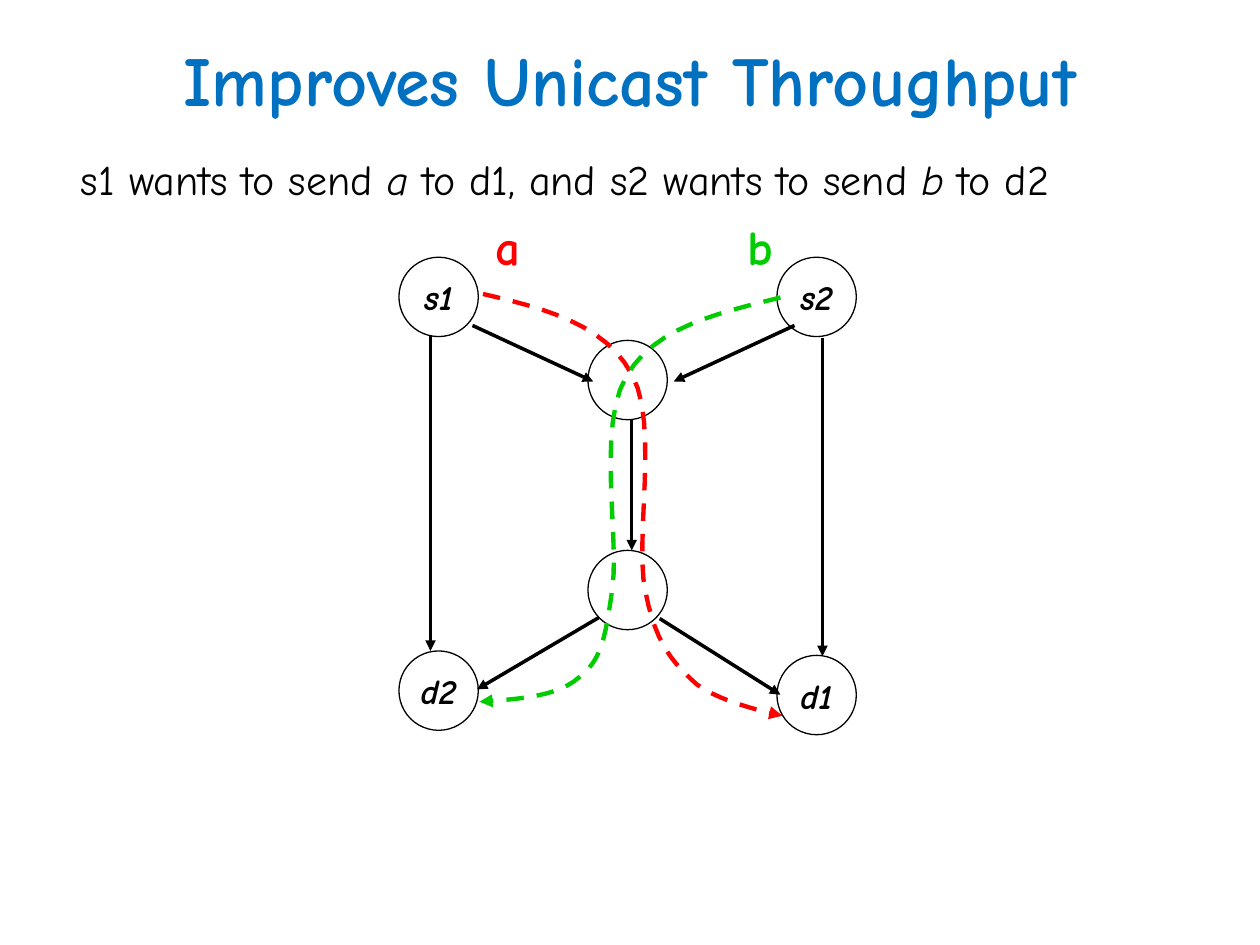
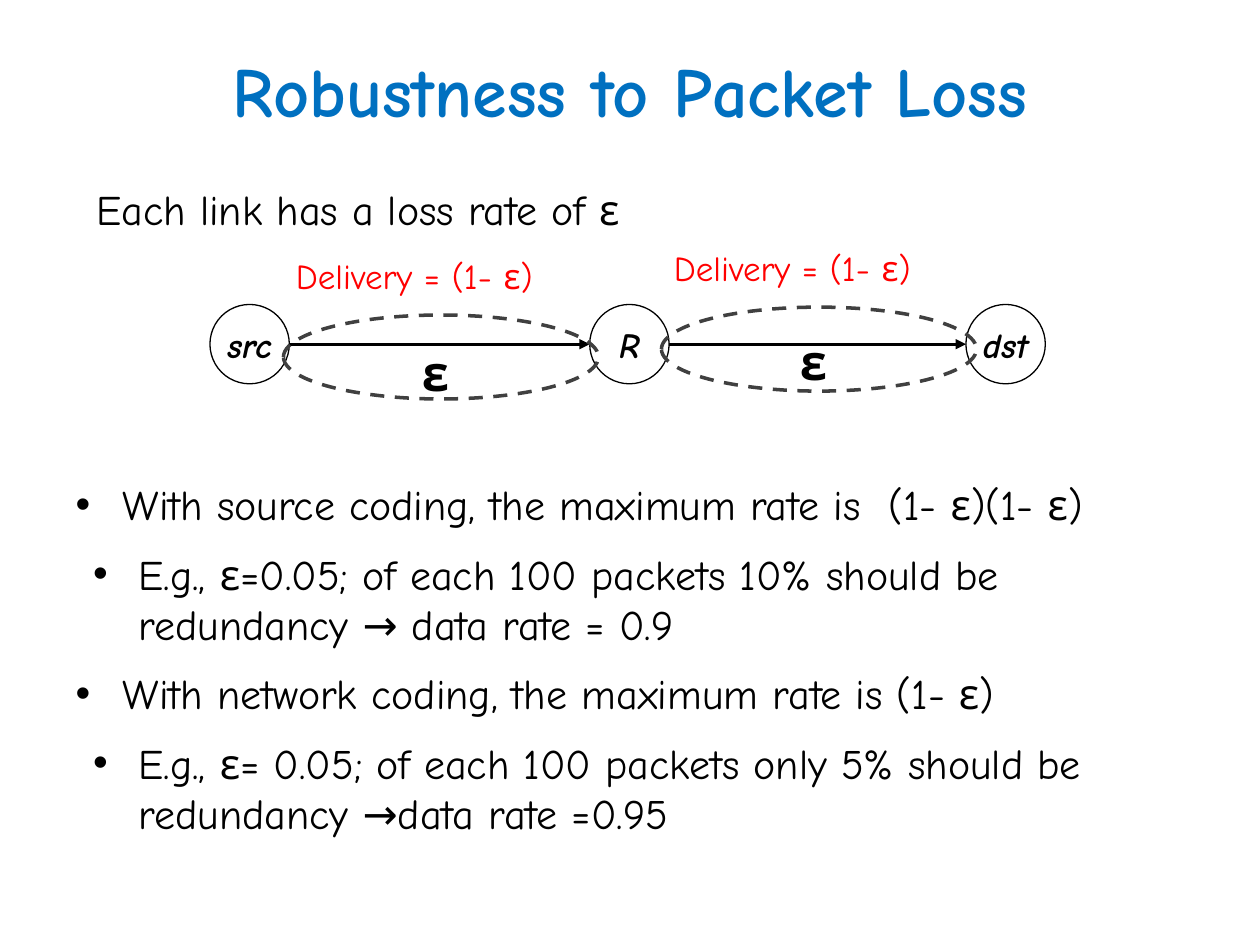
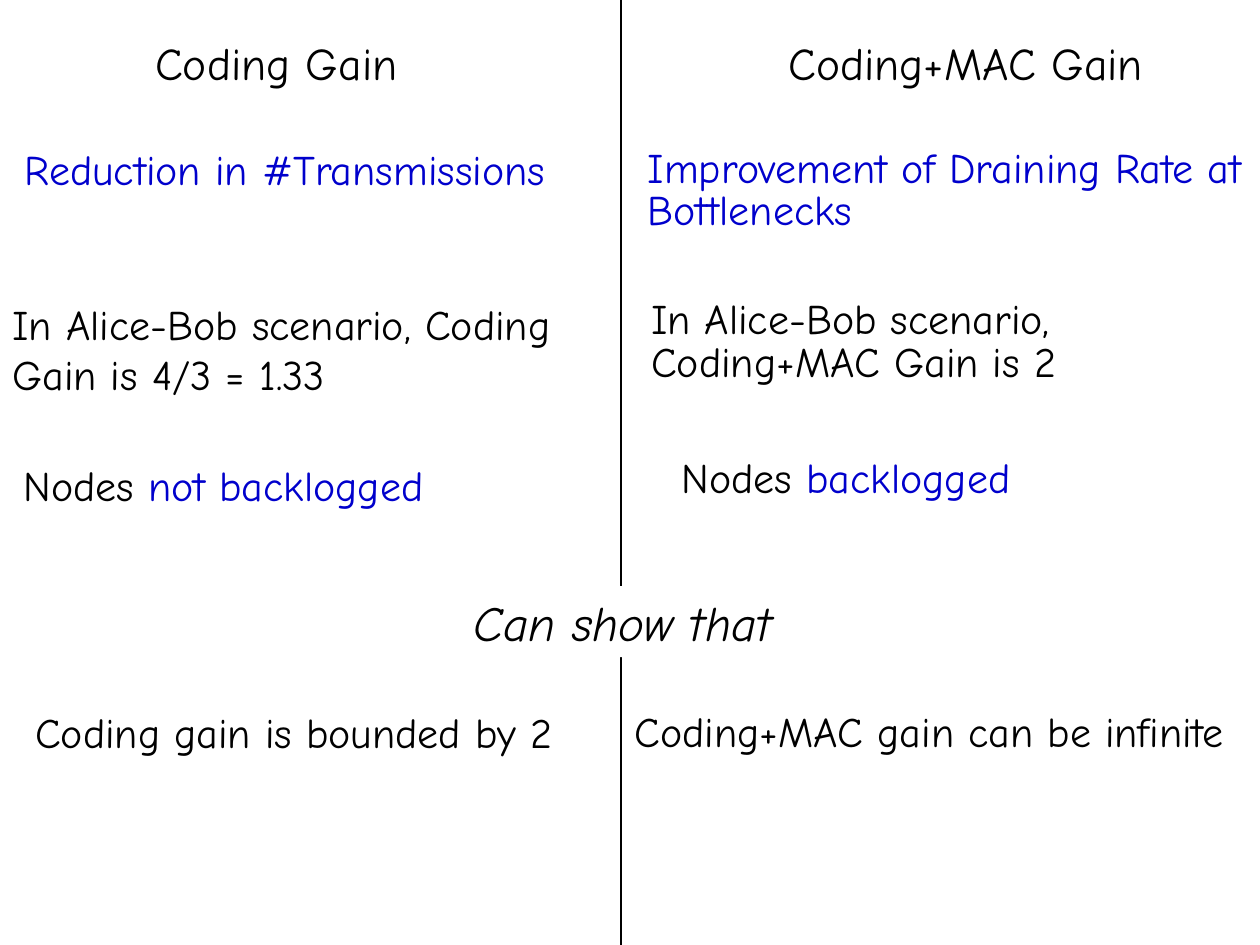
import lxml.etree
import pptx
import pptx.dml.color
import pptx.enum.dml
import pptx.enum.shapes
import pptx.enum.text
import pptx.oxml.ns
import pptx.util

Pt = pptx.util.Pt
qn = pptx.oxml.ns.qn
MSO_SHAPE = pptx.enum.shapes.MSO_SHAPE
STRAIGHT = pptx.enum.shapes.MSO_CONNECTOR.STRAIGHT
ANCHOR = pptx.enum.text.MSO_ANCHOR
CENTER = pptx.enum.text.PP_ALIGN.CENTER
LEFT = pptx.enum.text.PP_ALIGN.LEFT
NO_AUTOFIT = pptx.enum.text.MSO_AUTO_SIZE.NONE

FONT = "Comic Neue"
COLORS = {
    "title": "0070C0",
    "ink": "000000",
    "paper": "FFFFFF",
    "red": "FF0000",
    "green": "00CC00",
    "key": "0000CC",
    "link": "404040",
}
NODE = 45.36


def write(paragraph, text, size, color="ink", bold=False, italic=False):
    run = paragraph.add_run()
    run.text = text
    run.font.name = FONT
    run.font.size = Pt(size)
    run.font.bold = bold
    run.font.italic = italic
    run.font.color.rgb = pptx.dml.color.RGBColor.from_string(COLORS[color])


def outline(shape, color, width, dashed=False, arrow=False):
    shape.line.color.rgb = pptx.dml.color.RGBColor.from_string(COLORS[color])
    shape.line.width = Pt(width)
    if dashed:
        shape.line.dash_style = pptx.enum.dml.MSO_LINE.DASH
    properties = shape.element.spPr
    if arrow:
        lxml.etree.SubElement(properties.find(qn("a:ln")), qn("a:tailEnd"), type="triangle")
    lxml.etree.SubElement(properties, qn("a:effectLst"))


deck = pptx.Presentation()
deck.slide_width = Pt(720)
deck.slide_height = Pt(540)
unicast, robustness, gains = [
    deck.slides.add_slide(deck.slide_layouts[index]) for index in (1, 1, 6)
]

for slide, heading, left, top, width in [
    (unicast, "Improves Unicast Throughput", 18, 0, 684),
    (robustness, "Robustness to Packet Loss", 36, 6, 648),
]:
    title = slide.shapes.title
    title.left, title.top, title.width, title.height = Pt(left), Pt(top), Pt(width), Pt(90)
    title.text_frame.vertical_anchor = ANCHOR.MIDDLE
    title.text_frame.auto_size = NO_AUTOFIT
    title.text_frame.paragraphs[0].alignment = CENTER
    write(title.text_frame.paragraphs[0], heading, 40, "title", bold=True)

task = unicast.placeholders[1]
task.left, task.top, task.width, task.height = Pt(12), Pt(84), Pt(684), Pt(72)
task.text_frame.auto_size = NO_AUTOFIT
sentence = task.text_frame.paragraphs[0]
indents = sentence._p.get_or_add_pPr()
indents.set("marL", str(Pt(27)))
indents.set("indent", "0")
lxml.etree.SubElement(indents, qn("a:buNone"))
sentence.space_before = Pt(0)
sentence.space_after = Pt(6)
for words, italic in [
    ("s1 wants to send ", False),
    ("a ", True),
    ("to d1, and s2 wants to send ", False),
    ("b ", True),
    ("to d2", False),
]:
    write(sentence, words, 24, italic=italic)

rates = robustness.placeholders[1]
rates.left, rates.top, rates.width, rates.height = Pt(36), Pt(270), Pt(654), Pt(192)
rates.text_frame.auto_size = NO_AUTOFIT
for number, (level, words) in enumerate([
    (0, "With source coding, the maximum rate is  (1- ε)(1- ε)"),
    (1, "E.g., ε=0.05; of each 100 packets 10% should be redundancy → data rate = 0.9"),
    (0, "With network coding, the maximum rate is (1- ε)"),
    (1, "E.g., ε= 0.05; of each 100 packets only 5% should be redundancy →data rate =0.95"),
]):
    point = rates.text_frame.add_paragraph() if number else rates.text_frame.paragraphs[0]
    point.level = level
    indents = point._p.get_or_add_pPr()
    indents.set("marL", str(Pt((27, 36)[level])))
    indents.set("indent", str(-Pt((27, 26)[level])))
    lxml.etree.SubElement(indents, qn("a:buChar"), char="•")
    point.space_before = Pt(4.8 if number else 0)
    point.space_after = Pt(6)
    write(point, words, 24)

for slide, name, left, top in [
    (unicast, "s2", 444, 147),
    (unicast, "d2", 228, 372),
    (unicast, "s1", 228, 147),
    (unicast, "d1", 444, 374.5),
    (unicast, "", 336, 314.5),
    (unicast, "", 336, 194.5),
    (robustness, "dst", 552, 174),
    (robustness, "src", 120, 174),
    (robustness, "R", 337, 174),
]:
    node = slide.shapes.add_shape(MSO_SHAPE.OVAL, Pt(left), Pt(top), Pt(NODE), Pt(NODE))
    node.fill.solid()
    node.fill.fore_color.rgb = pptx.dml.color.RGBColor.from_string(COLORS["paper"])
    outline(node, "ink", 0.75)
    if name:
        node.text_frame.word_wrap = False
        node.text_frame.vertical_anchor = ANCHOR.MIDDLE
        node.text_frame.paragraphs[0].alignment = CENTER
        write(node.text_frame.paragraphs[0], name, 20, bold=True, italic=True)

for slide, weight, x1, y1, x2, y2 in [
    (unicast, 2, 270, 186, 339, 218),
    (unicast, 2, 470, 193, 470, 375),
    (unicast, 2, 454, 186, 385, 218),
    (unicast, 2, 342, 353, 272.5, 394),
    (unicast, 2, 377, 353.5, 446, 397),
    (unicast, 2, 361, 240, 361, 314.5),
    (unicast, 2, 246, 192, 246, 372),
    (robustness, 1.5, 382.5, 196.7, 552, 196.7),
    (robustness, 1.5, 165.5, 196.7, 337, 196.7),
]:
    hop = slide.shapes.add_connector(STRAIGHT, Pt(x1), Pt(y1), Pt(x2), Pt(y2))
    outline(hop, "ink", weight, arrow=True)

STEPS = 12
for color, start, curves in [
    ("red", (276, 168), [
        ((310, 176), (346, 185), (361, 214)),
        ((377, 242), (362, 310), (369, 339)),
        ((375, 369), (385, 379), (398, 391)),
        ((412, 402), (447, 409), (447, 409)),
    ]),
    ("green", (446, 170), [
        ((410, 179), (374, 187), (358, 215)),
        ((341, 243), (354, 307), (350, 336)),
        ((346, 364), (344, 377), (331, 387)),
        ((319, 398), (297, 399.5), (274, 401)),
    ]),
]:
    flow = unicast.shapes.build_freeform(Pt(start[0]), Pt(start[1]))
    stops = []
    for first, second, end in curves:
        for step in range(1, STEPS + 1):
            t = step / STEPS
            stops.append(tuple(
                Pt((1 - t) ** 3 * a + 3 * (1 - t) ** 2 * t * b + 3 * (1 - t) * t ** 2 * c + t ** 3 * d)
                for a, b, c, d in zip(start, first, second, end)
            ))
        start = end
    flow.add_line_segments(stops, close=False)
    route = flow.convert_to_shape()
    route.fill.background()
    outline(route, color, 2.5, dashed=True, arrow=True)

for left, top in [(162, 180), (378, 175.5)]:
    loss = robustness.shapes.add_shape(MSO_SHAPE.OVAL, Pt(left), Pt(top), Pt(180), Pt(48))
    loss.fill.background()
    outline(loss, "link", 2, dashed=True)

divider = gains.shapes.add_connector(STRAIGHT, Pt(355), Pt(0), Pt(355), Pt(540))
outline(divider, "ink", 1)

for slide, left, top, width, height, words, size, color, bold in [
    (unicast, 276, 120, 36, 41, "a", 28, "red", True),
    (unicast, 420, 120, 36, 41, "b", 28, "green", True),
    (robustness, 234, 192, 36, 41, "ε", 28, "ink", True),
    (robustness, 450, 186, 36, 41, "ε", 28, "ink", True),
    (robustness, 48, 101.5, 384, 36.5, "Each link has a loss rate of ε", 24, "ink", False),
    (robustness, 162, 142, 186, 31, "Delivery = (1- ε)", 20, "red", False),
    (robustness, 378, 137.5, 186, 31, "Delivery = (1- ε)", 20, "red", False),
]:
    label = slide.shapes.add_textbox(Pt(left), Pt(top), Pt(width), Pt(height))
    label.text_frame.word_wrap = True
    write(label.text_frame.paragraphs[0], words, size, color, bold)

for left, top, width, height, spacing, align, size, pieces in [
    (7, 78.5, 350, 36, 1, LEFT, 24, [("Reduction in #Transmissions", "key")]),
    (363, 81.5, 363.5, 56, 0.85, LEFT, 24,
     [("Improvement of Draining Rate at Bottlenecks", "key")]),
    (0, 167, 364, 65.5, 1, LEFT, 24,
     [("In Alice-Bob scenario, Coding Gain is 4/3 = 1.33", "ink")]),
    (365, 168, 355.5, 56, 0.85, LEFT, 24,
     [("In Alice-Bob scenario, Coding+MAC Gain is 2", "ink")]),
    (-4, 16.5, 324, 38, 1, CENTER, 26, [("Coding Gain", "ink")]),
    (390, 16.5, 324, 38, 1, CENTER, 26, [("Coding+MAC Gain", "ink")]),
    (13, 400, 332.5, 36, 1, LEFT, 24, [("Coding gain is bounded by 2", "ink")]),
    (355.5, 399.5, 391, 36, 1, LEFT, 24, [("Coding+MAC gain can be infinite", "ink")]),
    (6.5, 259, 346, 36, 1, LEFT, 24, [("Nodes ", "ink"), ("not backlogged", "key")]),
    (382.5, 259, 345.5, 31.5, 0.85, LEFT, 24, [("Nodes ", "ink"), ("backlogged", "key")]),
]:
    claim = gains.shapes.add_textbox(Pt(left), Pt(top), Pt(width), Pt(height))
    claim.text_frame.word_wrap = True
    statement = claim.text_frame.paragraphs[0]
    statement.alignment = align
    statement.line_spacing = spacing
    for words, color in pieces:
        write(statement, words, size, color)

conclusion = gains.shapes.add_shape(MSO_SHAPE.RECTANGLE, Pt(263.5), Pt(335), Pt(245), Pt(40.5))
conclusion.shadow.inherit = False
conclusion.fill.solid()
conclusion.fill.fore_color.rgb = pptx.dml.color.RGBColor.from_string(COLORS["paper"])
conclusion.line.fill.background()
conclusion.text_frame.vertical_anchor = ANCHOR.TOP
conclusion.text_frame.paragraphs[0].alignment = LEFT
write(conclusion.text_frame.paragraphs[0], "Can show that", 28, italic=True)

deck.save("out.pptx")
